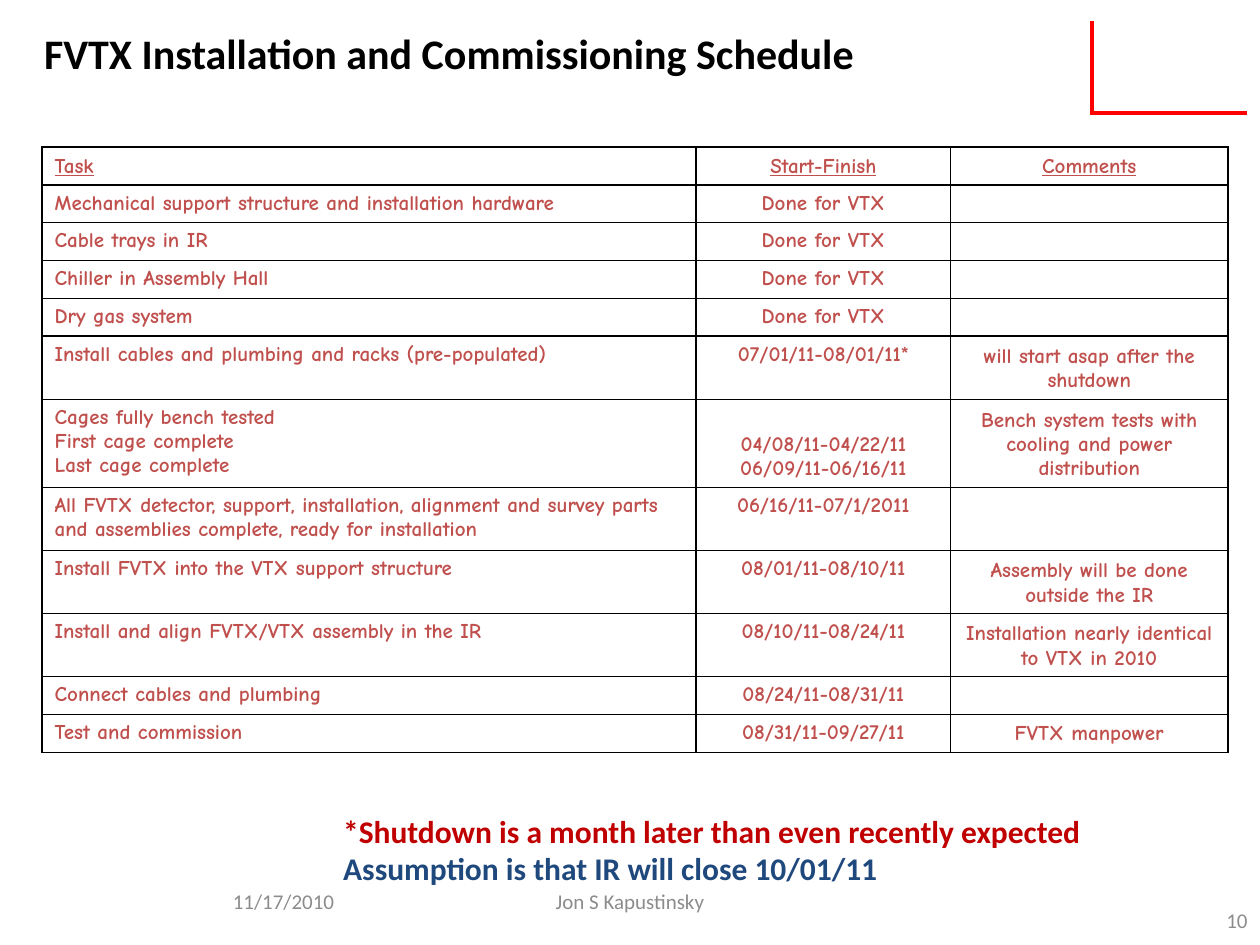
import dataclasses
import typing

import lxml.etree
import pptx
import pptx.dml.color
import pptx.enum.shapes
import pptx.enum.text
import pptx.oxml.ns
import pptx.util

Align = pptx.enum.text.PP_ALIGN
Anchor = pptx.enum.text.MSO_ANCHOR
Fit = pptx.enum.text.MSO_AUTO_SIZE
qn = pptx.oxml.ns.qn

UNIT = 1 / 12  # grid step in inches: 120 columns by 90 rows


@dataclasses.dataclass(frozen=True)
class Theme:
    sans: str = "Calibri"
    comic: str = "Comic Neue"
    black: str = "000000"
    red: str = "FF0000"
    brick: str = "C0504D"
    alert: str = "C00000"
    navy: str = "1F497D"
    gray: str = "8C8C8C"
    small: int = 12
    mid: int = 18
    large: int = 24
    rule: float = 1
    mark: float = 2.25


class Box(typing.NamedTuple):
    col: float
    row: float
    wide: float
    high: float


class Label(typing.NamedTuple):
    text: str
    box: Box
    align: Align


class Task(typing.NamedTuple):
    name: str
    dates: str
    note: str = ""
    lines: int = 1


THEME = Theme()
DONE = "Done for VTX"
TASKS = [
    Task("Task", "Start-Finish", "Comments"),
    Task("Mechanical support structure and installation hardware", DONE),
    Task("Cable trays in IR", DONE),
    Task("Chiller in Assembly Hall", DONE),
    Task("Dry gas system", DONE),
    Task("Install cables and plumbing and racks (pre-populated)",
         "07/01/11-08/01/11*", "will start asap after the shutdown", 2),
    Task("Cages fully bench tested\nFirst cage complete\nLast cage complete",
         "04/08/11-04/22/11\n06/09/11-06/16/11",
         "Bench system tests with cooling and power distribution", 3),
    Task("All FVTX detector, support, installation, alignment and survey "
         "parts and assemblies complete, ready for installation",
         "06/16/11-07/1/2011", lines=2),
    Task("Install FVTX into the VTX support structure", "08/01/11-08/10/11",
         "Assembly will be done outside the IR", 2),
    Task("Install and align FVTX/VTX assembly in the IR", "08/10/11-08/24/11",
         "Installation nearly identical to VTX in 2010", 2),
    Task("Connect cables and plumbing", "08/24/11-08/31/11"),
    Task("Test and commission", "08/31/11-09/27/11", "FVTX manpower"),
]
WIDTHS = (62.3, 24.25, 26.4)
FOOT = [
    Label("11/17/2010", Box(21, 83.4, 13, 4.8), Align.LEFT),
    Label("Jon S Kapustinsky", Box(41, 83.4, 38, 4.8), Align.CENTER),
    Label("10", Box(114, 85.2, 6, 4.8), Align.RIGHT),
]


def span(steps: float) -> pptx.util.Length:
    """Turn grid steps into a length."""
    return pptx.util.Inches(steps * UNIT)


def write(frame, text: str, *, size: int, font: str, colors: typing.Sequence[str],
          bold: bool = False, line: bool = False, align: Align = Align.LEFT) -> None:
    """Fill a frame, one paragraph a line; the last colour serves any further lines."""
    for i, part in enumerate(text.split("\n")):
        para = frame.paragraphs[0] if i == 0 else frame.add_paragraph()
        para.alignment = align
        if not part:
            # An empty cell needs a type size too, or its row grows.
            lxml.etree.SubElement(para._p, qn("a:endParaRPr"), sz=str(size * 100))
            continue
        run = para.add_run()
        run.text = part
        face = run.font
        face.name, face.size = font, pptx.util.Pt(size)
        face.bold, face.underline = bold, line
        color = colors[min(i, len(colors) - 1)]
        face.color.rgb = pptx.dml.color.RGBColor.from_string(color)


def add_text(slide, text: str, box: Box, *, anchor: Anchor = Anchor.TOP,
             fit: Fit = Fit.NONE, **style) -> None:
    shape = slide.shapes.add_textbox(*map(span, box))
    frame = shape.text_frame
    frame.word_wrap = True
    frame.auto_size = fit
    frame.vertical_anchor = anchor
    write(frame, text, **style)


def add_title(slide, text: str, box: Box) -> None:
    title = slide.shapes.title
    title.left, title.top, title.width, title.height = map(span, box)
    frame = title.text_frame
    frame.word_wrap = True
    frame.auto_size = Fit.SHAPE_TO_FIT_TEXT
    frame.vertical_anchor = Anchor.TOP
    write(frame, text, size=THEME.large, font=THEME.sans,
          colors=[THEME.black], bold=True)


def add_line(slide, *ends: float) -> None:
    line = slide.shapes.add_connector(
        pptx.enum.shapes.MSO_CONNECTOR.STRAIGHT, *map(span, ends))
    line.line.color.rgb = pptx.dml.color.RGBColor.from_string(THEME.red)
    line.line.width = pptx.util.Pt(THEME.mark)
    lxml.etree.SubElement(line._element.spPr, qn("a:effectLst"))


def frame_cell(cell) -> None:
    """Clear the fill and rule all four sides."""
    cell.fill.background()
    props = cell._tc.get_or_add_tcPr()
    for i, side in enumerate("LRTB"):
        edge = lxml.etree.Element(qn(f"a:ln{side}"),
                                  w=str(pptx.util.Pt(THEME.rule)))
        fill = lxml.etree.SubElement(edge, qn("a:solidFill"))
        lxml.etree.SubElement(fill, qn("a:srgbClr"), val=THEME.black)
        props.insert(i, edge)


def add_tasks(slide, tasks: typing.Sequence[Task], col: float, row: float) -> None:
    highs = [1.2 + 2.28 * task.lines for task in tasks]
    box = Box(col, row, sum(WIDTHS), sum(highs))
    table = slide.shapes.add_table(len(tasks), len(WIDTHS), *map(span, box)).table
    table.first_row = table.horz_banding = False
    for column, wide in zip(table.columns, WIDTHS):
        column.width = span(wide)
    for r, (task, high) in enumerate(zip(tasks, highs)):
        table.rows[r].height = span(high)
        for c, text in enumerate((task.name, task.dates, task.note)):
            cell = table.cell(r, c)
            frame_cell(cell)
            low = r == 0 or c == 2 or (c == 1 and "\n" in text)
            cell.vertical_anchor = Anchor.BOTTOM if low else Anchor.TOP
            write(cell.text_frame, text, size=THEME.small, font=THEME.comic,
                  colors=[THEME.brick], bold=True, line=r == 0,
                  align=Align.CENTER if c else Align.LEFT)


def main() -> None:
    deck = pptx.Presentation()
    deck.slide_width, deck.slide_height = span(120), span(90)
    slide = deck.slides.add_slide(deck.slide_layouts[5])
    add_line(slide, 103.8, 10.8, 118.8, 10.8)
    add_line(slide, 104, 2, 104, 11)
    add_tasks(slide, TASKS, 4, 14)
    add_title(slide, "FVTX Installation and Commissioning Schedule", Box(3, 2, 80, 6))
    add_text(slide, "*Shutdown is a month later than even recently expected\n"
             "Assumption is that IR will close 10/01/11",
             Box(31.5, 76.7, 74.4, 8.5), fit=Fit.SHAPE_TO_FIT_TEXT,
             size=THEME.mid, font=THEME.sans, bold=True,
             colors=[THEME.alert, THEME.navy])
    for label in FOOT:
        add_text(slide, label.text, label.box, anchor=Anchor.MIDDLE,
                 size=THEME.small, font=THEME.sans, colors=[THEME.gray],
                 align=label.align)
    deck.save("out.pptx")


if __name__ == "__main__":
    main()
